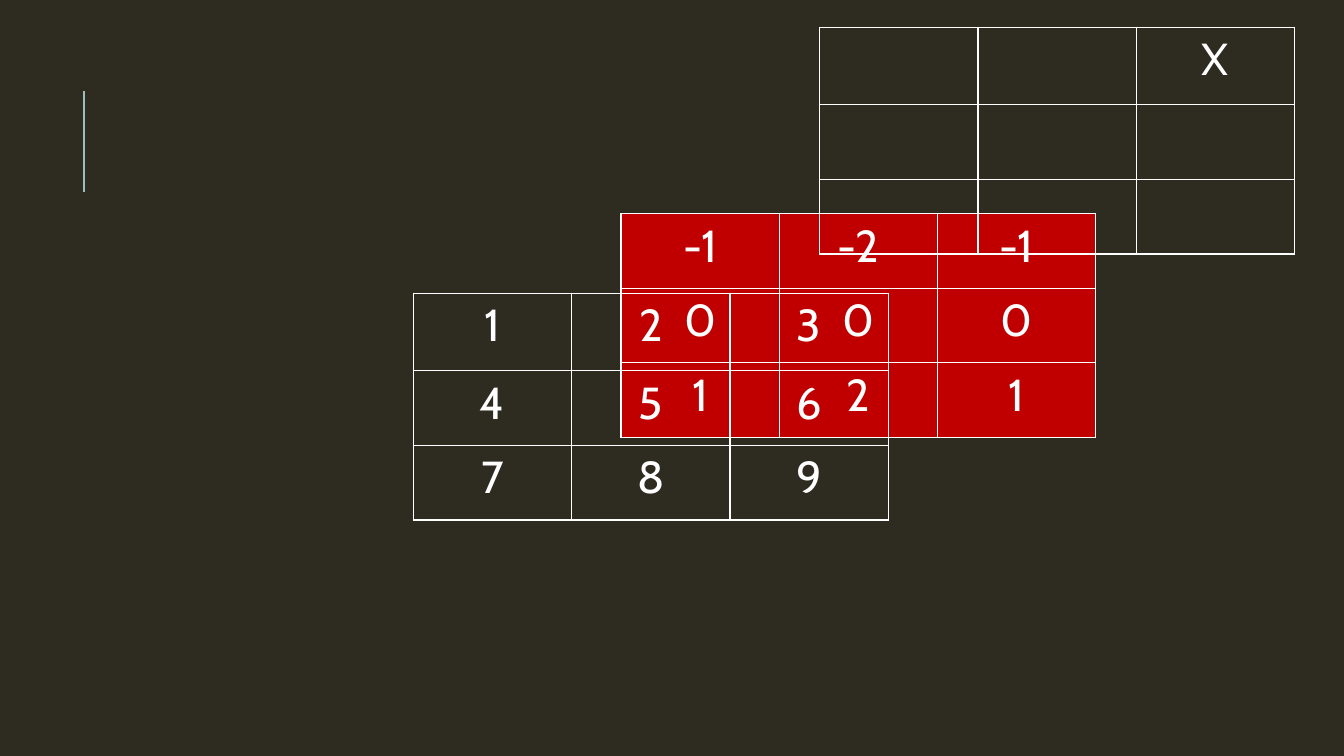
from lxml import etree
from pptx import Presentation
from pptx.dml.color import RGBColor
from pptx.enum.shapes import MSO_CONNECTOR
from pptx.enum.text import PP_ALIGN
from pptx.oxml.ns import qn
from pptx.util import Inches, Pt

CENTER = PP_ALIGN.CENTER
STRAIGHT = MSO_CONNECTOR.STRAIGHT
FONT = "Cabin"
WHITE = "FFFFFF"
RED = "C00000"
BACK = "2E2B21"
ACCENT = "9CBEBD"
COL = 1.57
ROW = 0.74
TALL = 0.77

KERNEL = [["-1", "-2", "-1"], ["0", "0", "0"], ["1", "2", "1"]]
PIXELS = [["1", "2", "3"], ["4", "5", "6"], ["7", "8", "9"]]
RESULT = [["", "", "X"], ["", "", ""], ["", "", ""]]


def paint(fill, color):
    fill.solid()
    fill.fore_color.rgb = RGBColor.from_string(color)


def write(frame, text, size=32, color=WHITE, align=CENTER):
    para = frame.paragraphs[0]
    para.alignment = align
    run = para.add_run()
    run.text = text
    run.font.name = FONT
    run.font.size = Pt(size)
    run.font.color.rgb = RGBColor.from_string(color)


def edge(cell, color=WHITE, width=1):
    """Draw a line on all four sides of a cell."""
    props = cell._tc.get_or_add_tcPr()
    for side in ("a:lnL", "a:lnR", "a:lnT", "a:lnB"):
        line = etree.SubElement(props, qn(side), w=str(Pt(width)))
        solid = etree.SubElement(line, qn("a:solidFill"))
        etree.SubElement(solid, qn("a:srgbClr"), val=color)


def add_grid(slide, left, top, rows, first=ROW, fill=None):
    heights = [first] + [ROW] * (len(rows) - 1)
    wide = len(rows[0])
    table = slide.shapes.add_table(
        len(rows), wide, Inches(left), Inches(top),
        Inches(COL * wide), Inches(sum(heights))).table
    table.first_row = False
    table.horz_banding = False
    for col in table.columns:
        col.width = Inches(COL)
    for r, row in enumerate(rows):
        table.rows[r].height = Inches(heights[r])
        for c, text in enumerate(row):
            cell = table.cell(r, c)
            edge(cell)
            if fill:
                paint(cell.fill, fill)
            else:
                cell.fill.background()
            if text:
                write(cell.text_frame, text)


def add_line(slide, x1, y1, x2, y2, color, width):
    line = slide.shapes.add_connector(
        STRAIGHT, Inches(x1), Inches(y1), Inches(x2), Inches(y2))
    line.line.color.rgb = RGBColor.from_string(color)
    line.line.width = Pt(width)
    etree.SubElement(line._element.spPr, qn("a:effectLst"))


def main():
    deck = Presentation()
    deck.slide_width = Inches(13.33)
    deck.slide_height = Inches(7.5)
    slide = deck.slides.add_slide(deck.slide_layouts[6])
    paint(slide.background.fill, BACK)

    add_line(slide, 0.83, 1.9, 0.83, 0.9, ACCENT, 1.5)
    add_grid(slide, 6.16, 2.12, KERNEL, fill=RED)
    add_grid(slide, 4.1, 2.91, PIXELS, first=TALL)
    add_grid(slide, 8.13, 0.27, RESULT, first=TALL)
    deck.save("out.pptx")


if __name__ == "__main__":
    main()
